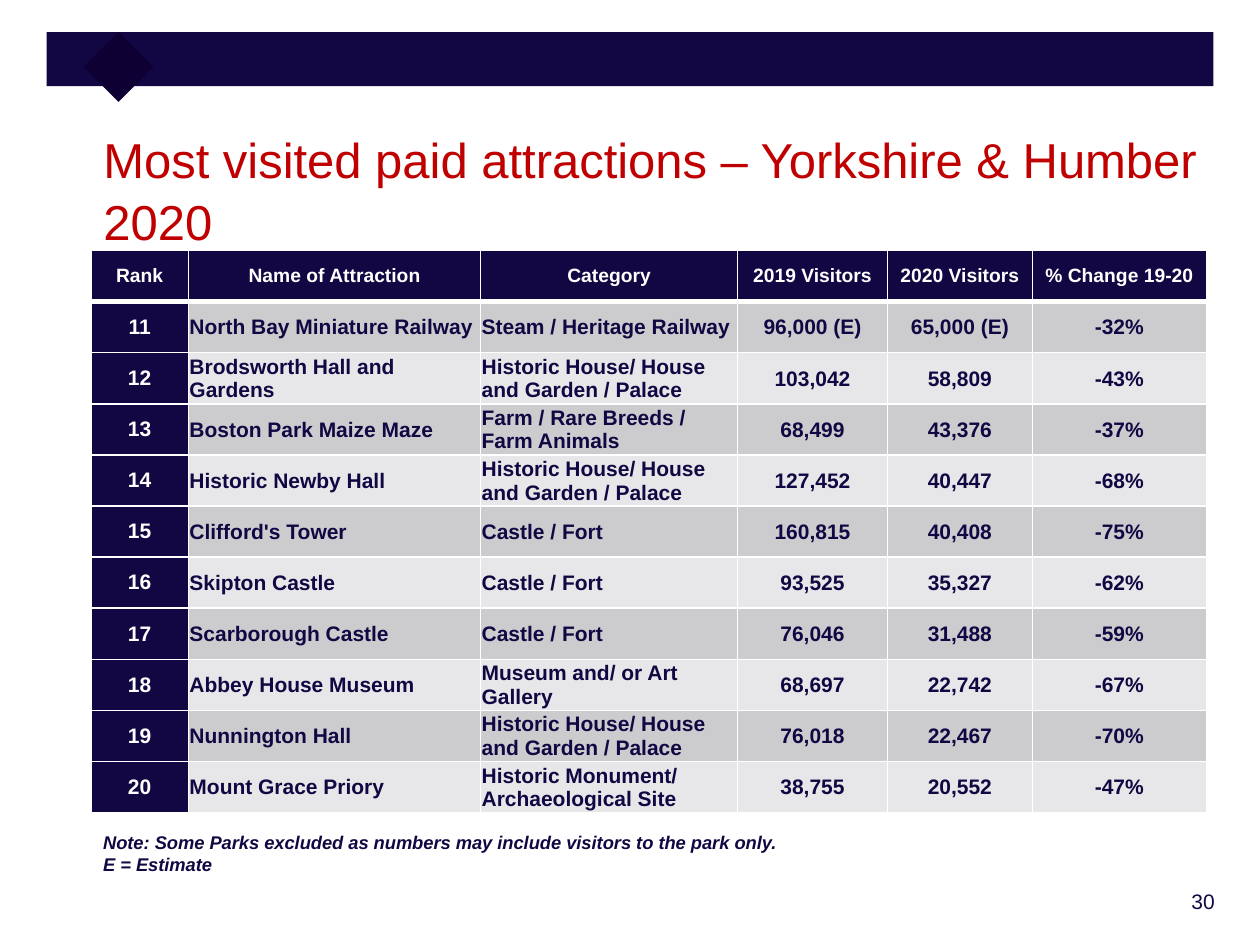
import pptx
import pptx.util
import pptx.oxml
from pptx.dml.color import RGBColor
from pptx.enum.shapes import MSO_SHAPE
from pptx.enum.text import MSO_ANCHOR, PP_ALIGN
from pptx.oxml.ns import nsdecls
from pptx.util import Cm, Pt

# Content
TITLE = "Most visited paid attractions – Yorkshire & Humber 2020"
HEADERS = ["Rank", "Name of Attraction", "Category",
           "2019 Visitors", "2020 Visitors", "% Change 19-20"]
HOUSE = "Historic House/ House and Garden / Palace"
CASTLE = "Castle / Fort"
FIRST_RANK = 11
ATTRACTIONS = [
    ("North Bay Miniature Railway", "Steam / Heritage Railway", "96,000 (E)", "65,000 (E)", "-32%"),
    ("Brodsworth Hall and Gardens", HOUSE, "103,042", "58,809", "-43%"),
    ("Boston Park Maize Maze", "Farm / Rare Breeds / Farm Animals", "68,499", "43,376", "-37%"),
    ("Historic Newby Hall", HOUSE, "127,452", "40,447", "-68%"),
    ("Clifford's Tower", CASTLE, "160,815", "40,408", "-75%"),
    ("Skipton Castle", CASTLE, "93,525", "35,327", "-62%"),
    ("Scarborough Castle", CASTLE, "76,046", "31,488", "-59%"),
    ("Abbey House Museum", "Museum and/ or Art Gallery", "68,697", "22,742", "-67%"),
    ("Nunnington Hall", HOUSE, "76,018", "22,467", "-70%"),
    ("Mount Grace Priory", "Historic Monument/ Archaeological Site", "38,755", "20,552", "-47%"),
]
NOTES = ["Note: Some Parks excluded as numbers may include visitors to the park only.",
         "E = Estimate"]
PAGE_NUMBER = "30"

# Format
NAVY = RGBColor(0x12, 0x07, 0x42)
DARK = RGBColor(0x0E, 0x00, 0x33)
RED = RGBColor(0xC0, 0x00, 0x00)
WHITE = RGBColor(0xFF, 0xFF, 0xFF)
BANDS = [RGBColor(0xCC, 0xCC, 0xCF), RGBColor(0xE7, 0xE7, 0xE9)]
COLUMN_WIDTHS = [1.97, 5.89, 5.18, 3.02, 2.92, 3.51]
ROW_HEIGHT = 1.03
LEFT = 1.83
LEFT_ALIGNED = (1, 2)


def write(para, text, color, align=PP_ALIGN.LEFT, **formats):
    para.text = text
    para.alignment = align
    for name, value in {"name": "Arial", **formats}.items():
        setattr(para.font, name, value)
    para.font.color.rgb = color


def add_block(page, left, top, width, height, color, rotation=0):
    block = page.shapes.add_shape(MSO_SHAPE.RECTANGLE, Cm(left), Cm(top), Cm(width), Cm(height))
    block.shadow.inherit = False
    block.fill.solid()
    block.fill.fore_color.rgb = color
    block.line.fill.background()
    block.rotation = rotation


def add_lines(page, left, top, width, height, lines, **formats):
    box = page.shapes.add_textbox(Cm(left), Cm(top), Cm(width), Cm(height))
    frame = box.text_frame
    frame.word_wrap = True
    for index, line in enumerate(lines):
        para = frame.add_paragraph() if index else frame.paragraphs[0]
        write(para, line, NAVY, **formats)


def set_borders(cell, widths):
    properties = cell._tc.get_or_add_tcPr()
    for side, width in zip("LRTB", widths):
        properties.append(pptx.oxml.parse_xml(
            f'<a:ln{side} {nsdecls("a")} w="{Pt(width)}"><a:solidFill>'
            f'<a:srgbClr val="{WHITE}"/></a:solidFill></a:ln{side}>'))


def fill_cell(cell, row, column, text):
    header, rank = row == 0, column == 0
    dark = header or rank
    set_borders(cell, (1, 1, 3 if row == 1 else 1, 3 if header else 1))
    cell.fill.solid()
    cell.fill.fore_color.rgb = NAVY if dark else BANDS[(row - 1) % 2]
    cell.vertical_anchor = MSO_ANCHOR.MIDDLE
    margins = (0.2, 0.2, 0.13, 0.13) if dark else (0.02, 0.02, 0.02, 0)
    for side, margin in zip(("left", "right", "top", "bottom"), margins):
        setattr(cell, f"margin_{side}", Cm(margin))
    left_aligned = column in LEFT_ALIGNED and not header
    write(cell.text_frame.paragraphs[0], text, WHITE if dark else NAVY,
          PP_ALIGN.LEFT if left_aligned else PP_ALIGN.CENTER,
          size=Pt(11 if header else 12), bold=True)


def add_attractions(page):
    rows = [HEADERS] + [(str(rank), *entry) for rank, entry in enumerate(ATTRACTIONS, FIRST_RANK)]
    table = page.shapes.add_table(
        len(rows), len(HEADERS), Cm(LEFT), Cm(5.05),
        Cm(sum(COLUMN_WIDTHS)), Cm(ROW_HEIGHT * len(rows))).table
    for column, width in zip(table.columns, COLUMN_WIDTHS):
        column.width = Cm(width)
    for row, values in enumerate(rows):
        table.rows[row].height = Cm(ROW_HEIGHT)
        for column, text in enumerate(values):
            fill_cell(table.cell(row, column), row, column, text)


def main():
    deck = pptx.Presentation()
    deck.slide_width, deck.slide_height = Cm(25.4), Cm(19.05)
    page = deck.slides.add_slide(deck.slide_layouts[5])

    # Banner with diamond
    add_block(page, 0.94, 0.65, 23.52, 1.09, NAVY)
    add_block(page, 1.89, 0.85, 1, 1, DARK, rotation=45)

    # Title
    title = page.shapes.title
    title.left, title.top, title.width, title.height = Cm(LEFT), Cm(2.41), Cm(22.63), Cm(2.26)
    title.text_frame.vertical_anchor = MSO_ANCHOR.TOP
    title.text_frame.word_wrap = True
    heading = title.text_frame.paragraphs[0]
    write(heading, TITLE, RED, size=Pt(28))
    heading.line_spacing = 1.06

    # Table, notes and page number
    add_attractions(page)
    add_lines(page, LEFT, 16.64, 21.97, 1.14, NOTES, size=Pt(10.5), bold=True, italic=True)
    add_lines(page, 21.67, 17.78, 3.07, 0.91, [PAGE_NUMBER], align=PP_ALIGN.RIGHT, size=Pt(12))

    deck.save("out.pptx")


if __name__ == "__main__":
    main()
